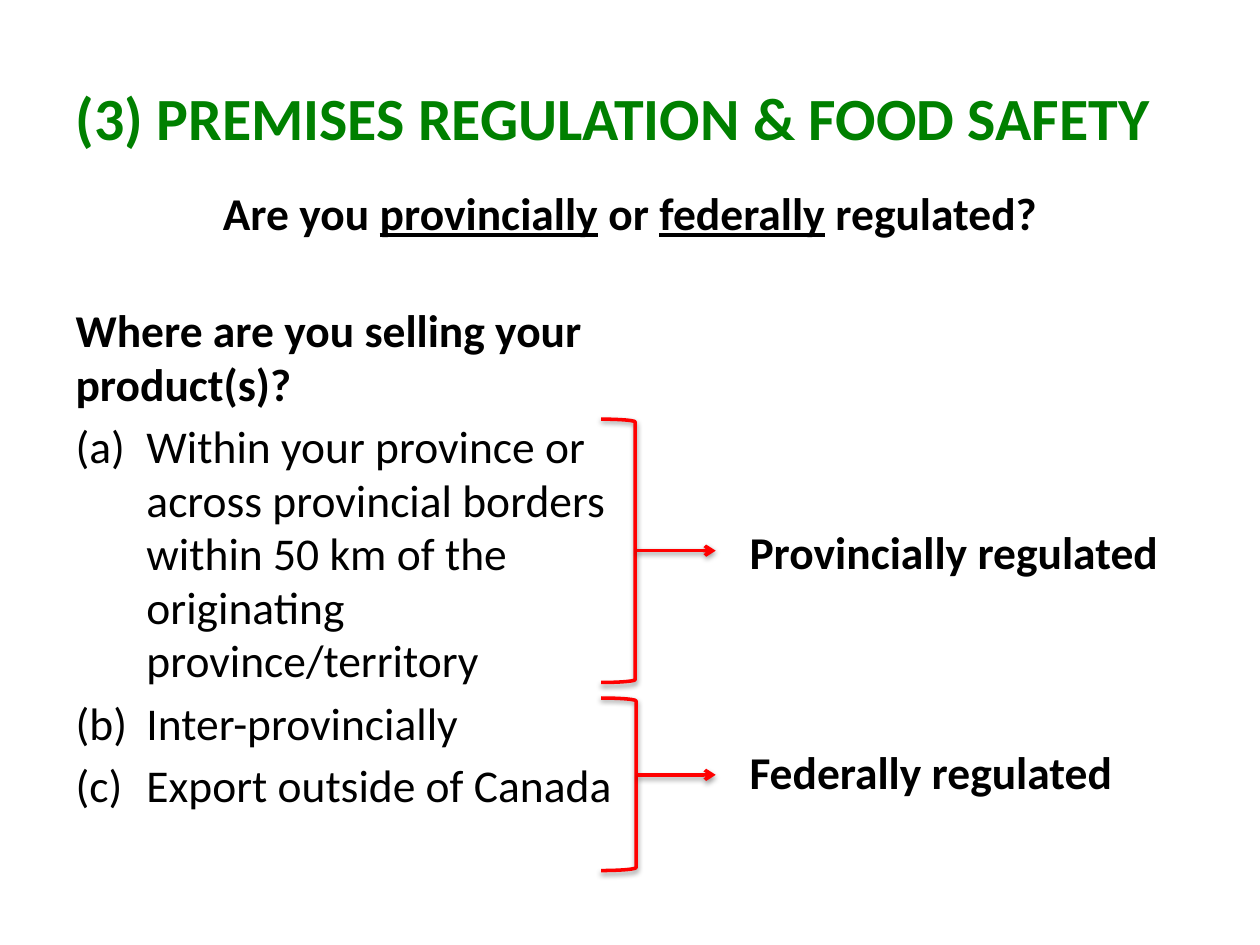
from lxml import etree
from pptx import Presentation
from pptx import util as u
from pptx.dml import color
from pptx.enum import shapes, text
from pptx.oxml import ns

Pt = u.Pt
COLORS = {"title": "008000", "text": "000000", "accent": "FF0000", "shadow": "000000"}
FONT = "Calibri"
BODY_SIZE = 26


def rgb(name):
    return color.RGBColor.from_string(COLORS[name])


def add_xml(parent, tag, **attrs):
    return etree.SubElement(parent, ns.qn(tag), {k: str(v) for k, v in attrs.items()})


def add_text(p, content, size=BODY_SIZE, bold=False, underline=False, fill="text"):
    r = p.add_run()
    r.text = content
    r.font.name = FONT
    r.font.size = Pt(size)
    r.font.bold = bold
    r.font.underline = underline
    r.font.color.rgb = rgb(fill)
    return r


def place(sp, box):
    sp.left, sp.top, sp.width, sp.height = (Pt(v) for v in box)


def add_box(s, box):
    sp = s.shapes.add_textbox(*(Pt(v) for v in box))
    sp.text_frame.word_wrap = True
    return sp.text_frame.paragraphs[0]


def style_line(sp):
    sp.line.color.rgb = rgb("accent")
    sp.line.width = Pt(2)
    effects = add_xml(sp._element.spPr, "a:effectLst")
    shadow = add_xml(effects, "a:outerShdw", blurRad=Pt(3.1), dist=Pt(1.6),
                     dir=90 * 60000, rotWithShape=0)
    tint = add_xml(shadow, "a:srgbClr", val=COLORS["shadow"])
    add_xml(tint, "a:alpha", val=38000)


def add_title(s, box):
    sp = s.shapes.title
    place(sp, box)
    tf = sp.text_frame
    tf.auto_size = text.MSO_AUTO_SIZE.NONE
    tf.vertical_anchor = text.MSO_ANCHOR.MIDDLE
    p = tf.paragraphs[0]
    p.alignment = text.PP_ALIGN.LEFT
    add_text(p, "(3) PREMISES REGULATION & FOOD SAFETY", size=34.2, bold=True, fill="title")


def add_question(s, box):
    p = add_box(s, box)
    p.alignment = text.PP_ALIGN.CENTER
    for content, underline in [("Are you ", False), ("provincially", True), (" or ", False),
                               ("federally", True), (" regulated?", False)]:
        add_text(p, content, bold=True, underline=underline)


def add_markets(s, box):
    sp = s.placeholders[1]
    place(sp, box)
    tf = sp.text_frame
    tf.auto_size = text.MSO_AUTO_SIZE.NONE
    items = ["Where are you selling your product(s)?",
             "Within your province or across provincial borders within 50 km of "
             "the originating province/territory",
             "Inter-provincially",
             "Export outside of Canada"]
    for i, item in enumerate(items):
        p = tf.add_paragraph() if i else tf.paragraphs[0]
        p.line_spacing = 0.98
        p.space_before = Pt(5.2)
        add_text(p, item, bold=i == 0)
        pPr = p._p.get_or_add_pPr()
        indent = Pt(40.5) if i else 0
        pPr.set("marL", str(indent))
        pPr.set("indent", str(-indent))
        if i:
            add_xml(pPr, "a:buFont", typeface="+mj-lt")
            add_xml(pPr, "a:buAutoNum", type="alphaLcParenBoth")
        else:
            add_xml(pPr, "a:buNone")


def add_regulator(s, box, label, arrow_y, label_y):
    left, top, width, height = box
    bracket = s.shapes.add_shape(shapes.MSO_SHAPE.RIGHT_BRACKET, *(Pt(v) for v in box))
    bracket.fill.background()
    style_line(bracket)
    y = Pt(top + arrow_y)
    arrow = s.shapes.add_connector(shapes.MSO_CONNECTOR.STRAIGHT,
                                   Pt(left + width + 1), y, Pt(left + 65.5), y)
    style_line(arrow)
    add_xml(arrow.line._get_or_add_ln(), "a:tailEnd", type="arrow")
    p = add_box(s, (left + 77.7, top + label_y, 253, 39))
    add_text(p, label, bold=True)


def main():
    prs = Presentation()
    prs.slide_width, prs.slide_height = Pt(720), Pt(540)
    s = prs.slides.add_slide(prs.slide_layouts[1])
    add_title(s, (36, 21.6, 648, 90))
    add_question(s, (36, 102.2, 648, 70.6))
    add_markets(s, (36, 170.6, 350.6, 356.4))
    add_regulator(s, (343.5, 239.5, 19.5, 150.5), "Provincially regulated", 75.2, 56.5)
    add_regulator(s, (343.5, 398.9, 20, 98.6), "Federally regulated", 43.9, 22.5)
    prs.save("out.pptx")


if __name__ == "__main__":
    main()
